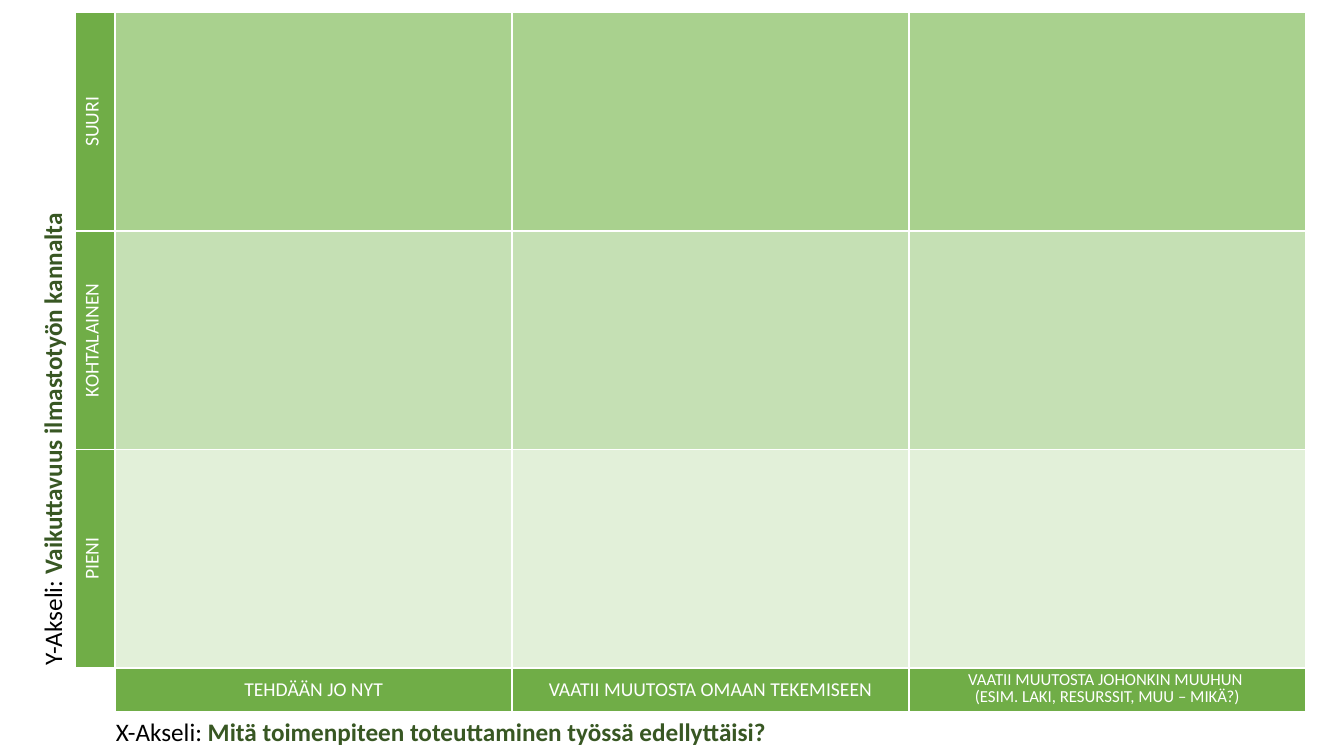
import pptx
import pptx.dml.color
import pptx.enum.text
import pptx.oxml
import pptx.oxml.ns
import pptx.util

Pt = pptx.util.Pt
Align = pptx.enum.text.PP_ALIGN
Anchor = pptx.enum.text.MSO_ANCHOR
Fit = pptx.enum.text.MSO_AUTO_SIZE

FONT = "Calibri"
WHITE, BLACK = "FFFFFF", "000000"
HEADER_GREEN, DARK_GREEN = "70AD47", "385723"

IMPACT_ROWS = [
    ("SUURI", "A9D18E"),
    ("KOHTALAINEN", "C5E0B4"),
    ("PIENI", "E2F0D9"),
]
CHANGE_COLUMNS = [
    ("TEHDÄÄN JO NYT", 14, None),
    ("VAATII MUUTOSTA OMAAN TEKEMISEEN", 14, None),
    ("VAATII MUUTOSTA JOHONKIN MUUHUN \v(ESIM. LAKI, RESURSSIT, MUU – MIKÄ?)", 12, 12),
]
AXES = [
    ("Y-Akseli: ", "Vaikuttavuus ilmastotyön kannalta", (-148.3, 282.2, 371.5, 29.08), 270, True),
    ("X-Akseli: ", "Mitä toimenpiteen toteuttaminen työssä edellyttäisi?", (75.6, 508.3, 488.2, 29.08), 0, False),
]

TABLE_LEFT, TABLE_TOP = 53.5, 8.9
LABEL_WIDTH, CELL_WIDTH = 28.8, 283.5
CELL_HEIGHT, LABEL_HEIGHT = 156.1, 31.2


def color(value):
    return pptx.dml.color.RGBColor.from_string(value)


def style_span(span, size, ink, bold=False):
    span.font.name = FONT
    span.font.size = Pt(size)
    span.font.bold = bold
    span.font.color.rgb = color(ink)


def add_borders(cell):
    properties = cell._tc.get_or_add_tcPr()
    for index, side in enumerate(("lnL", "lnR", "lnT", "lnB")):
        border = pptx.oxml.parse_xml(
            f'<a:{side} {pptx.oxml.ns.nsdecls("a")} w="{Pt(1.5)}">'
            f'<a:solidFill><a:srgbClr val="{WHITE}"/></a:solidFill></a:{side}>')
        properties.insert(index, border)


def fill_cell(cell, shade):
    cell.fill.solid()
    cell.fill.fore_color.rgb = color(shade)


def label_cell(cell, text, size=14, spacing=None):
    fill_cell(cell, HEADER_GREEN)
    cell.vertical_anchor = Anchor.MIDDLE
    para = cell.text_frame.paragraphs[0]
    para.text = text
    para.alignment = Align.CENTER
    if spacing:
        para.line_spacing = Pt(spacing)
    for span in para.runs:
        style_span(span, size, WHITE)


def add_matrix(page):
    row_count, column_count = len(IMPACT_ROWS), len(CHANGE_COLUMNS)
    widths = [LABEL_WIDTH] + [CELL_WIDTH] * column_count
    heights = [CELL_HEIGHT] * row_count + [LABEL_HEIGHT]
    frame = page.shapes.add_table(
        len(heights), len(widths), Pt(TABLE_LEFT), Pt(TABLE_TOP),
        Pt(sum(widths)), Pt(sum(heights)))
    matrix = frame.table
    matrix.first_row = matrix.horz_banding = False
    for column, width in zip(matrix.columns, widths):
        column.width = Pt(width)
    for row, height in zip(matrix.rows, heights):
        row.height = Pt(height)

    for row, (text, shade) in enumerate(IMPACT_ROWS):
        label = matrix.cell(row, 0)
        label_cell(label, text)
        label._tc.get_or_add_tcPr().set("vert", "vert270")
        for column in range(1, column_count + 1):
            fill_cell(matrix.cell(row, column), shade)
    matrix.cell(row_count, 0).fill.background()
    for column, (text, size, spacing) in enumerate(CHANGE_COLUMNS, 1):
        label_cell(matrix.cell(row_count, column), text, size, spacing)
    for cell in matrix.iter_cells():
        add_borders(cell)


def add_axis(page, name, question, place, rotation, wrap):
    box = page.shapes.add_textbox(*map(Pt, place))
    box.rotation = rotation
    box.text_frame.word_wrap = wrap
    box.text_frame.auto_size = Fit.SHAPE_TO_FIT_TEXT
    para = box.text_frame.paragraphs[0]
    for text, ink, bold in ((name, BLACK, False), (question, DARK_GREEN, True)):
        span = para.add_run()
        span.text = text
        style_span(span, 18, ink, bold)


def main():
    deck = pptx.Presentation()
    deck.slide_width, deck.slide_height = Pt(960), Pt(540)
    page = deck.slides.add_slide(deck.slide_layouts[6])
    add_matrix(page)
    for axis in AXES:
        add_axis(page, *axis)
    deck.save("out.pptx")


if __name__ == "__main__":
    main()
